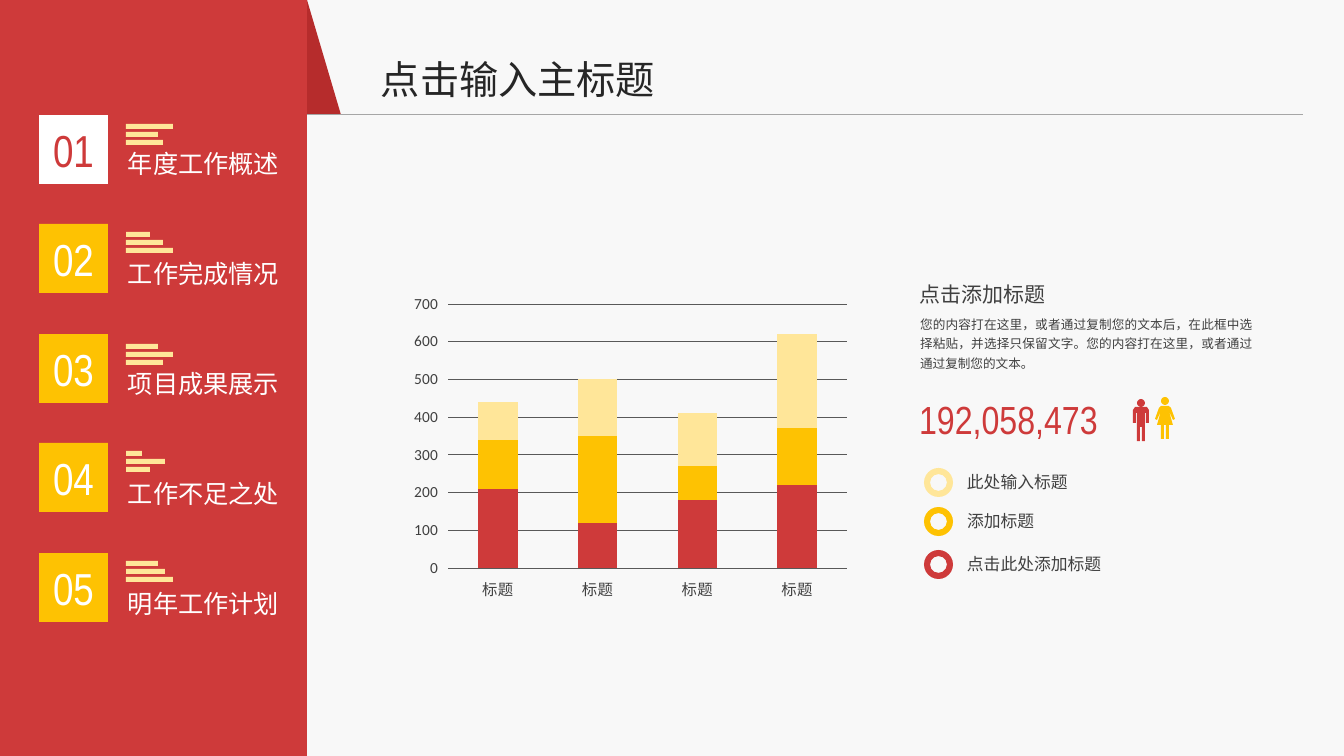
from pptx import Presentation
from pptx.chart.data import CategoryChartData
from pptx.dml.color import RGBColor
from pptx.enum.chart import XL_CHART_TYPE, XL_TICK_MARK
from pptx.enum.shapes import MSO_CONNECTOR, MSO_SHAPE
from pptx.enum.text import MSO_ANCHOR, PP_ALIGN
from pptx.oxml import parse_xml
from pptx.oxml.ns import nsdecls, qn
from pptx.util import Pt

RECT, OVAL, RING = MSO_SHAPE.RECTANGLE, MSO_SHAPE.OVAL, MSO_SHAPE.DONUT
TRIANGLE = MSO_SHAPE.RIGHT_TRIANGLE
STRAIGHT = MSO_CONNECTOR.STRAIGHT
STACKED = XL_CHART_TYPE.COLUMN_STACKED
OUTSIDE = XL_TICK_MARK.OUTSIDE
CENTER, JUSTIFY = PP_ALIGN.CENTER, PP_ALIGN.JUSTIFY
TOP, MIDDLE = MSO_ANCHOR.TOP, MSO_ANCHOR.MIDDLE

PX = 9071
THEME = {
    "paper": RGBColor(0xF8, 0xF8, 0xF8),
    "white": RGBColor(0xFF, 0xFF, 0xFF),
    "red": RGBColor(0xCE, 0x3A, 0x3A),
    "dark_red": RGBColor(0xB6, 0x2C, 0x2C),
    "yellow": RGBColor(0xFE, 0xC2, 0x02),
    "cream": RGBColor(0xFF, 0xE6, 0x99),
    "ink": RGBColor(0x26, 0x26, 0x26),
    "text": RGBColor(0x40, 0x40, 0x40),
    "grid": RGBColor(0x59, 0x59, 0x59),
    "rule": RGBColor(0xA6, 0xA6, 0xA6),
    "han": "Noto Sans CJK SC",
    "digits": "Arial Narrow",
    "axis": "Calibri",
    "title": 28, "number": 32, "menu": 18, "heading": 15,
    "legend": 12, "label": 11, "body": 9,
}

deck = Presentation()
deck.slide_width, deck.slide_height = 1344 * PX, 756 * PX
page = deck.slides.add_slide(deck.slide_layouts[6])
page.background.fill.solid()
page.background.fill.fore_color.rgb = THEME["paper"]


def add_box(left, top, width, height, color=None, kind=RECT):
    place = [length * PX for length in (left, top, width, height)]
    if color is None:
        return page.shapes.add_textbox(*place)
    box = page.shapes.add_shape(kind, *place)
    box.shadow.inherit = False
    box.fill.solid()
    box.fill.fore_color.rgb = THEME[color]
    box.line.fill.background()
    return box


def write(box, text, size, color="text", font="han", align=None, anchor=TOP,
          wrap=False, spacing=None, side=8, edge=4):
    frame = box.text_frame
    frame.word_wrap = wrap
    frame.vertical_anchor = anchor
    frame.margin_left = frame.margin_right = side * PX
    frame.margin_top = frame.margin_bottom = edge * PX
    para = frame.paragraphs[0]
    para.alignment = align
    para.line_spacing = spacing
    span = para.add_run()
    span.text = text
    span.font.size = Pt(THEME[size])
    span.font.name = THEME[font]
    span.font.color.rgb = THEME[color]
    east_asian = span.font._element.makeelement(qn("a:ea"), {"typeface": THEME[font]})
    span.font._element.append(east_asian)


add_box(0, 0, 307, 756, "red")
add_box(307, 0, 34, 115, "dark_red", TRIANGLE)
rule = page.shapes.add_connector(STRAIGHT, 307 * PX, 115 * PX, 1303 * PX, 115 * PX)
rule.line.color.rgb = THEME["rule"]
rule.line.width = Pt(0.75)
rule._element.spPr.append(parse_xml(f"<a:effectLst {nsdecls('a')}/>"))

menu = [
    ("年度工作概述", 124, (47, 32, 37)),
    ("工作完成情况", 232, (24, 37, 47)),
    ("项目成果展示", 344, (32, 47, 37)),
    ("工作不足之处", 451, (16, 39, 24)),
    ("明年工作计划", 561, (32, 39, 47)),
]
for index, (label, stripes_top, stripe_widths) in enumerate(menu):
    fill, ink = ("yellow", "white") if index else ("white", "red")
    square = add_box(39, 115 + index * 438 // 4, 69, 69, fill)
    write(square, f"{index + 1:02d}", "number", ink, "digits",
          align=CENTER, anchor=MIDDLE)
    for row, width in enumerate(stripe_widths):
        add_box(126, stripes_top + 8 * row, width, 5, "cream")
    write(add_box(118, 143 + 110 * index, 173, 40), label, "menu", "white",
          side=10, edge=5)

write(add_box(371, 50, 297, 57), "点击输入主标题", "title", "ink", side=10, edge=5)

data = CategoryChartData()
data.categories = ["标题"] * 4
chart_series = [
    ("点击此处添加标题", "red", (210, 120, 180, 220)),
    ("添加标题", "yellow", (130, 230, 90, 150)),
    ("此处输入标题", "cream", (100, 150, 140, 250)),
]
for name, color, values in chart_series:
    data.add_series(name, values)
chart = page.shapes.add_chart(
    STACKED, 400 * PX, 280 * PX, 460 * PX, 340 * PX, data).chart
chart.has_legend = False
chart.has_title = False
plot = chart.plots[0]
plot.gap_width, plot.overlap = 153, 100
plot.vary_by_categories = False
for series, (name, color, values) in zip(plot.series, chart_series):
    series.format.fill.solid()
    series.format.fill.fore_color.rgb = THEME[color]

for axis, font in ((chart.category_axis, "han"), (chart.value_axis, "axis")):
    axis.major_tick_mark = OUTSIDE
    axis.format.line.fill.background()
    axis.tick_labels.font.size = Pt(THEME["label"])
    axis.tick_labels.font.name = THEME[font]
    axis.tick_labels.font.color.rgb = THEME["text"]
scale = chart.value_axis
scale.minimum_scale, scale.maximum_scale, scale.major_unit = 0, 700, 100
scale.has_major_gridlines = True
scale.major_gridlines.format.line.color.rgb = THEME["grid"]
scale.major_gridlines.format.line.width = Pt(0.5)

plot_area = chart._chartSpace.xpath(".//c:plotArea")[0]
for layout in plot_area.findall(qn("c:layout")):
    plot_area.remove(layout)
plot_area.insert(0, parse_xml(
    f"<c:layout {nsdecls('c')}><c:manualLayout><c:layoutTarget val='inner'/>"
    "<c:xMode val='edge'/><c:yMode val='edge'/>"
    f"<c:x val='{48 / 460}'/><c:y val='{24 / 340}'/>"
    f"<c:w val='{399 / 460}'/><c:h val='{264 / 340}'/>"
    "</c:manualLayout></c:layout>"))

write(add_box(911, 269, 151, 38), "点击添加标题", "heading",
      wrap=True, spacing=1.5, edge=0)
write(add_box(912, 308, 348, 70),
      "您的内容打在这里，或者通过复制您的文本后，在此框中选择粘贴，并选择只保留文字。"
      "您的内容打在这里，或者通过通过复制您的文本。",
      "body", align=JUSTIFY, wrap=True, spacing=1.3)
write(add_box(911, 391, 215, 55), "192,058,473", "title", "red", "digits")

man = [(0, 407), (6, 407), (8, 410), (8, 423), (5, 423), (5, 413), (4, 413),
       (4, 441), (1, 441), (1, 427), (0, 427)]
woman = [(0, 406), (4, 406), (6, 408), (10, 419), (8, 420), (4, 411), (8, 425),
         (4, 425), (4, 439), (1, 439), (1, 425), (0, 425)]
for middle, head_top, color, half in ((1141, 399, "red", man),
                                      (1165, 397, "yellow", woman)):
    add_box(middle - 4, head_top, 8, 8, color, OVAL)
    outline = [(middle + x, y) for x, y in half]
    outline += [(middle - x, y) for x, y in reversed(half)]
    builder = page.shapes.build_freeform(*outline[0], scale=PX)
    builder.add_line_segments(outline[1:], close=True)
    body = builder.convert_to_shape()
    body.shadow.inherit = False
    body.fill.solid()
    body.fill.fore_color.rgb = THEME[color]
    body.line.fill.background()

for (name, color, values), top, width in zip(
        reversed(chart_series), (468, 507, 550), (120, 86, 155)):
    ring = add_box(924, top, 29, 29, color, RING)
    ring.adjustments[0] = 0.21
    write(add_box(959, top, width, 29), name, "legend")

deck.save("out.pptx")
